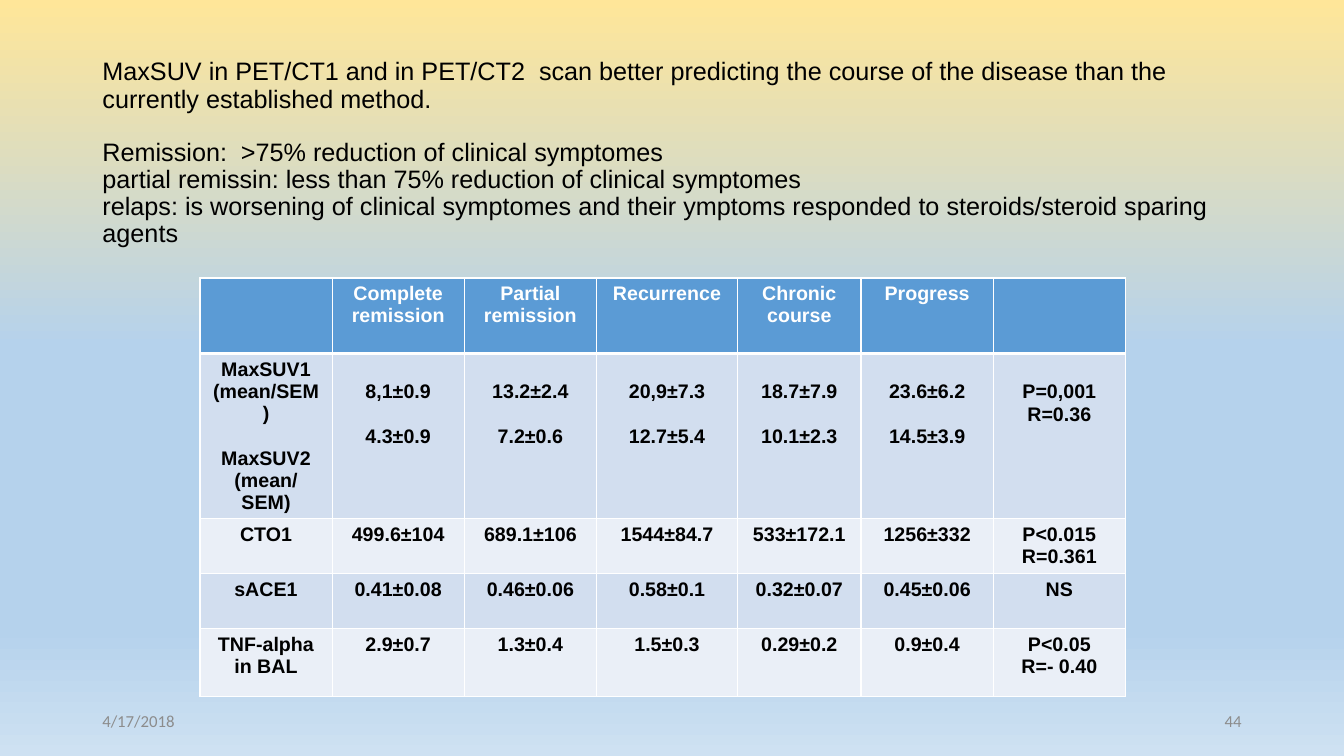
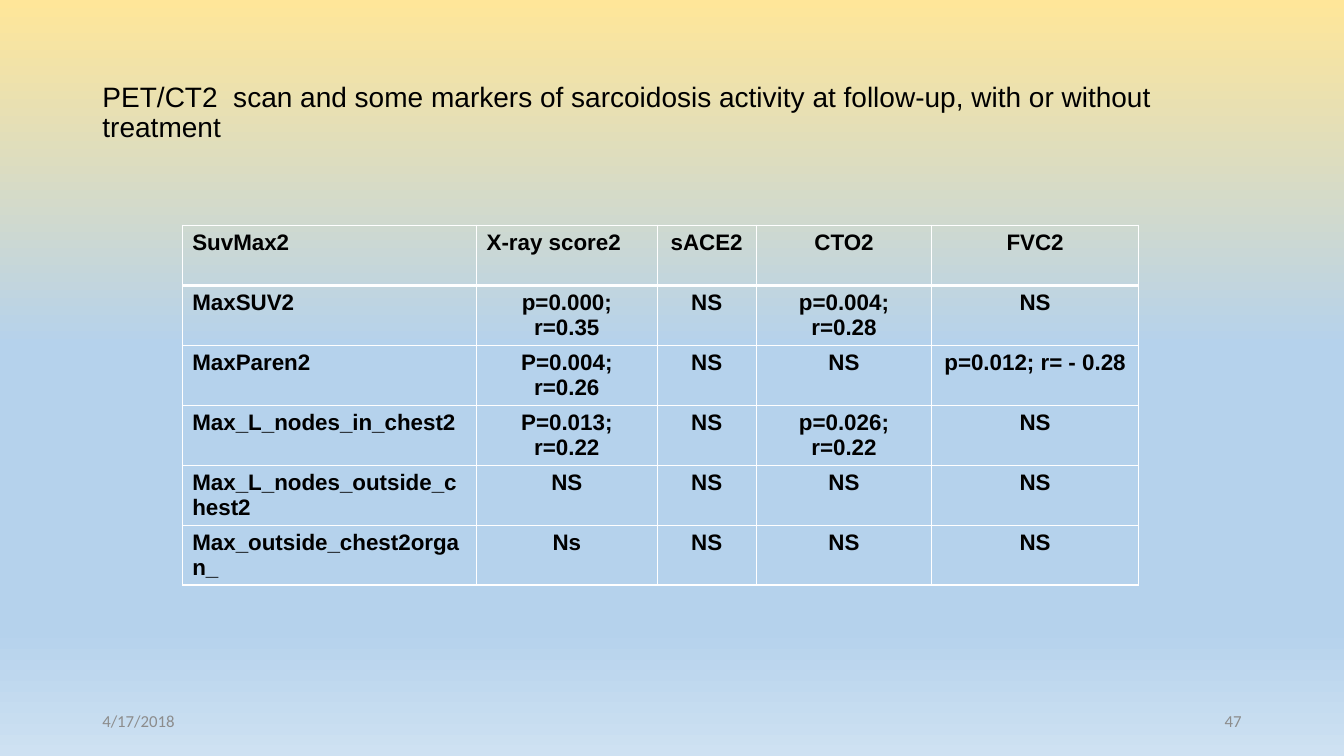
from dataclasses import dataclass

from lxml.etree import SubElement
from pptx import Presentation
from pptx.dml.color import RGBColor
from pptx.enum.text import MSO_ANCHOR, MSO_AUTO_SIZE, PP_ALIGN
from pptx.oxml.ns import qn
from pptx.presentation import Presentation as Deck
from pptx.slide import Slide, SlideMaster
from pptx.table import _Cell as Cell
from pptx.text.text import TextFrame
from pptx.util import Emu, Inches, Pt

GRID_COLUMNS, GRID_ROWS = 160, 90
GRID_UNIT = Inches(7.5) / GRID_ROWS
TITLE_ONLY_LAYOUT = 5


@dataclass(frozen=True)
class Theme:
    font: str = "Arial"
    footer_font: str = "Calibri"
    footer_size: int = 12
    text: str = "000000"
    white: str = "FFFFFF"
    footer: str = "8C8C8C"
    header: str = "5B9BD5"
    bands: tuple[str, str] = ("D2DEEF", "EAEFF7")
    background: tuple[tuple[int, str], ...] = (
        (0, "FFE699"), (46, "B5D2EC"), (83, "B5D2EC"), (100, "CEE1F2"),
    )
    thin_border: int = 1
    header_border: int = 3
    line_height: float = 1.15
    title_spacing: float = 0.9


THEME = Theme()


@dataclass(frozen=True)
class Box:
    """Position and size in grid units."""
    left: float
    top: float
    width: float
    height: float

    def lengths(self) -> tuple[Emu, ...]:
        return tuple(map(grid, (self.left, self.top, self.width, self.height)))


@dataclass(frozen=True)
class TextStyle:
    size: int
    color: str = THEME.text
    font: str = THEME.font
    bold: bool = False
    align: PP_ALIGN = PP_ALIGN.LEFT
    spacing: float = 1.0


@dataclass(frozen=True)
class TableSpec:
    left: float
    top: float
    columns: tuple[float, ...]
    rows: tuple[float, ...]
    cells: tuple[tuple[str, ...], ...]
    size: int
    filled: bool
    left_in_header: int = 0
    left_in_body: int = 0


@dataclass(frozen=True)
class Page:
    title: str
    title_size: int
    title_top: float
    table: TableSpec
    number: str


def grid(units: float) -> Emu:
    return Emu(round(units * GRID_UNIT))


def write_text(frame: TextFrame, text: str, style: TextStyle) -> int:
    """Write one paragraph per line; an empty line becomes space before the next.

    Returns the number of empty lines that lead the text.
    """
    lines = text.split("\n")
    leading = next((i for i, line in enumerate(lines) if line), 0)
    gap = 0
    paragraph = None
    for line in lines[leading:]:
        if not line:
            gap += 1
            continue
        paragraph = frame.add_paragraph() if paragraph else frame.paragraphs[0]
        paragraph.text = line
        paragraph.alignment = style.align
        paragraph.line_spacing = style.spacing
        paragraph.space_before = Pt(
            round(gap * style.size * THEME.line_height * style.spacing, 1))
        font = paragraph.font
        font.name, font.size, font.bold = style.font, Pt(style.size), style.bold
        font.color.rgb = RGBColor.from_string(style.color)
        gap = 0
    return leading


def set_background(master: SlideMaster) -> None:
    fill = master.background.fill
    fill.gradient()
    fill.gradient_angle = 270
    stops = next(master.element.iter(qn("a:gsLst")))
    for stop in list(stops):
        stops.remove(stop)
    for percent, color in THEME.background:
        stop = SubElement(stops, qn("a:gs"), pos=str(percent * 1000))
        SubElement(stop, qn("a:srgbClr"), val=color)


def set_borders(cell: Cell, top: int, bottom: int) -> None:
    properties = cell._tc.get_or_add_tcPr()
    widths = {"L": THEME.thin_border, "R": THEME.thin_border, "T": top, "B": bottom}
    for position, (side, width) in enumerate(widths.items()):
        line = SubElement(properties, qn(f"a:ln{side}"), w=str(Pt(width)))
        fill = SubElement(line, qn("a:solidFill"))
        SubElement(fill, qn("a:srgbClr"), val=THEME.white)
        properties.insert(position, line)


def format_cell(cell: Cell, spec: TableSpec, row: int, column: int) -> None:
    is_header = row == 0
    if spec.filled:
        color = THEME.header if is_header else THEME.bands[(row - 1) % 2]
        cell.fill.solid()
        cell.fill.fore_color.rgb = RGBColor.from_string(color)
    else:
        cell.fill.background()
    set_borders(
        cell,
        top=THEME.header_border if row == 1 else THEME.thin_border,
        bottom=THEME.header_border if is_header else THEME.thin_border,
    )
    left_count = spec.left_in_header if is_header else spec.left_in_body
    style = TextStyle(
        spec.size,
        color=THEME.white if is_header and spec.filled else THEME.text,
        bold=True,
        align=PP_ALIGN.LEFT if column < left_count else PP_ALIGN.CENTER,
    )
    leading = write_text(cell.text_frame, spec.cells[row][column], style)
    cell.margin_top = Inches(0.05) + Pt(leading * spec.size * THEME.line_height)


def add_table(slide: Slide, spec: TableSpec) -> None:
    box = Box(spec.left, spec.top, sum(spec.columns), sum(spec.rows))
    table = slide.shapes.add_table(
        len(spec.rows), len(spec.columns), *box.lengths()).table
    table.horz_banding = False
    table.first_row = False
    for column, width in zip(table.columns, spec.columns):
        column.width = grid(width)
    for row, height in zip(table.rows, spec.rows):
        row.height = grid(height)
    for row in range(len(spec.rows)):
        for column in range(len(spec.columns)):
            format_cell(table.cell(row, column), spec, row, column)


def set_title(slide: Slide, page: Page) -> None:
    title = slide.shapes.title
    title.left, title.top, title.width, title.height = Box(
        11, page.title_top, 138, 17.4).lengths()
    frame = title.text_frame
    frame.word_wrap = True
    frame.auto_size = MSO_AUTO_SIZE.NONE
    frame.vertical_anchor = MSO_ANCHOR.MIDDLE
    write_text(frame, page.title,
               TextStyle(page.title_size, spacing=THEME.title_spacing))


def add_footer(slide: Slide, left: float, text: str, align: PP_ALIGN) -> None:
    frame = slide.shapes.add_textbox(*Box(left, 83.4, 36, 4.8).lengths()).text_frame
    frame.word_wrap = True
    frame.vertical_anchor = MSO_ANCHOR.MIDDLE
    write_text(frame, text, TextStyle(
        THEME.footer_size, THEME.footer, THEME.footer_font, align=align))


def add_page(presentation: Deck, page: Page) -> None:
    slide = presentation.slides.add_slide(
        presentation.slide_layouts[TITLE_ONLY_LAYOUT])
    set_title(slide, page)
    add_table(slide, page.table)
    add_footer(slide, 11, "4/17/2018", PP_ALIGN.LEFT)
    add_footer(slide, 113, page.number, PP_ALIGN.RIGHT)


COURSE_TABLE = TableSpec(
    left=23.8, top=33.1,
    columns=(15.74, 15.74, 15.74, 16.8, 14.7, 15.74, 15.74),
    rows=(9, 19.6, 6.6, 6.5, 8.1),
    size=14, filled=True,
    cells=(
        ("", "Complete remission", "Partial remission", "Recurrence",
         "Chronic course", "Progress", ""),
        ("MaxSUV1 (mean/SEM)\n\nMaxSUV2\n(mean/SEM)", "\n8,1±0.9\n\n4.3±0.9",
         "\n13.2±2.4\n\n7.2±0.6", "\n20,9±7.3\n\n12.7±5.4",
         "\n18.7±7.9\n\n10.1±2.3", "\n23.6±6.2\n\n14.5±3.9", "\nP=0,001\nR=0.36"),
        ("CTO1", "499.6±104", "689.1±106", "1544±84.7", "533±172.1", "1256±332",
         "P<0.015\nR=0.361"),
        ("sACE1", "0.41±0.08", "0.46±0.06", "0.58±0.1", "0.32±0.07", "0.45±0.06",
         "NS"),
        ("TNF-alpha in BAL", "2.9±0.7", "1.3±0.4", "1.5±0.3", "0.29±0.2", "0.9±0.4",
         "P<0.05\nR=- 0.40"),
    ),
)

MARKER_TABLE = TableSpec(
    left=21.7, top=26.8,
    columns=(35.04, 21.5, 11.8, 20.9, 24.6),
    rows=(7.2,) + (7.1,) * 5,
    size=16, filled=False, left_in_header=2, left_in_body=1,
    cells=(
        ("SuvMax2", "X-ray score2", "sACE2", "CTO2", "FVC2"),
        ("MaxSUV2", "p=0.000; r=0.35", "NS", "p=0.004; r=0.28", "NS"),
        ("MaxParen2", "P=0.004; r=0.26", "NS", "NS", "p=0.012; r= - 0.28"),
        ("Max_L_nodes_in_chest2", "P=0.013; r=0.22", "NS", "p=0.026; r=0.22", "NS"),
        ("Max_L_nodes_outside_chest2", "NS", "NS", "NS", "NS"),
        ("Max_outside_chest2organ_", "Ns", "NS", "NS", "NS"),
    ),
)

PAGES = (
    Page(
        "MaxSUV in PET/CT1 and in PET/CT2  scan better predicting the course of the "
        "disease than the currently established method.\n\n"
        "Remission:  >75% reduction of clinical symptomes\n"
        "partial remissin: less than 75% reduction of clinical symptomes\n"
        "relaps: is worsening of clinical symptomes and their ymptoms responded to "
        "steroids/steroid sparing agents",
        title_size=18, title_top=9.6, table=COURSE_TABLE, number="44",
    ),
    Page(
        "PET/CT2  scan and some markers of sarcoidosis activity at follow-up, "
        "with or without treatment",
        title_size=20, title_top=4.8, table=MARKER_TABLE, number="47",
    ),
)


def main() -> None:
    presentation = Presentation()
    presentation.slide_width = grid(GRID_COLUMNS)
    presentation.slide_height = grid(GRID_ROWS)
    set_background(presentation.slide_master)
    for page in PAGES:
        add_page(presentation, page)
    presentation.save("out.pptx")


if __name__ == "__main__":
    main()
